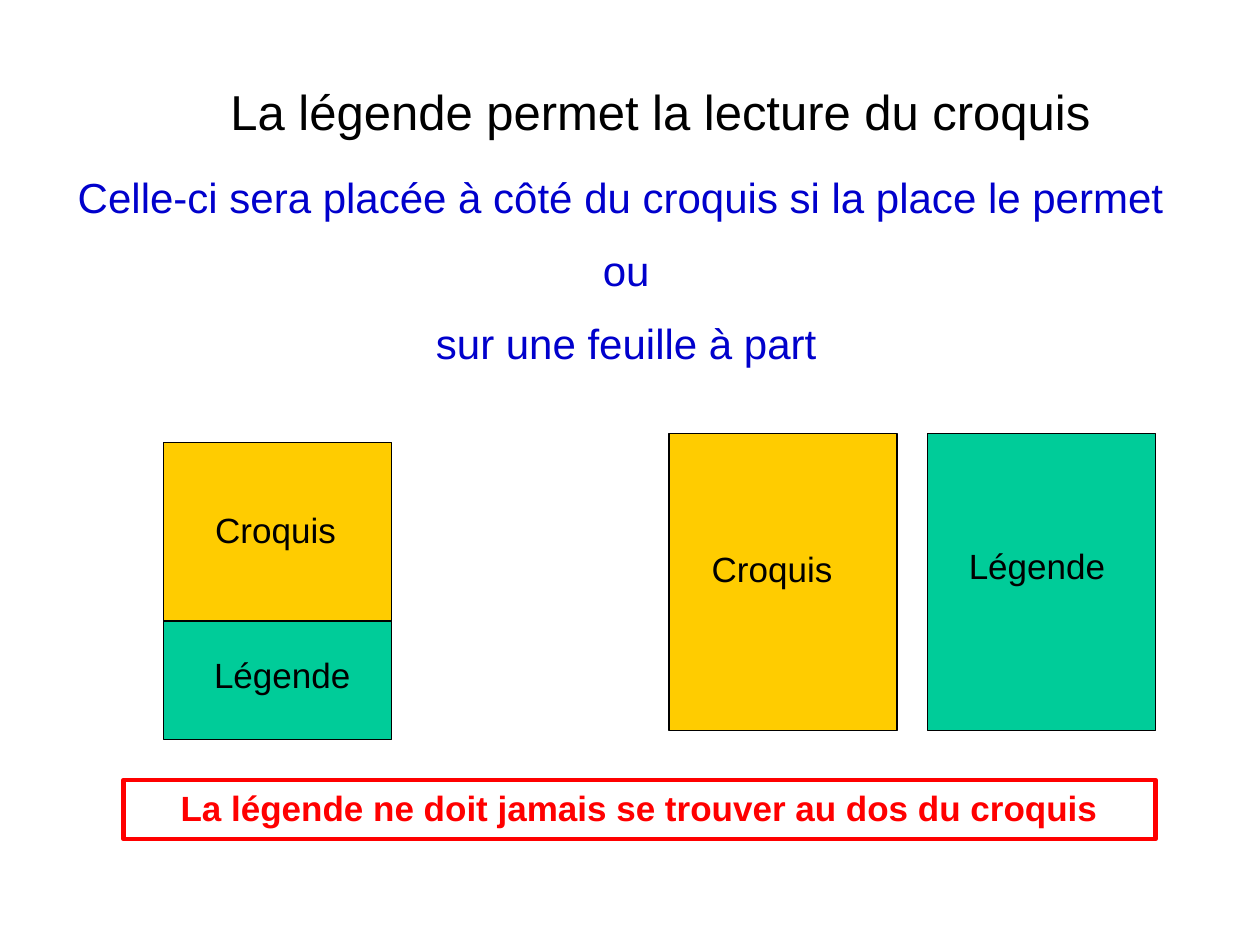
from pptx import Presentation
from pptx.dml.color import RGBColor
from pptx.enum.shapes import MSO_SHAPE as Shape
from pptx.enum.text import MSO_ANCHOR as Anchor, PP_ALIGN as Align
from pptx.util import Inches, Pt

BLACK = RGBColor(0x00, 0x00, 0x00)
BLUE = RGBColor(0x00, 0x00, 0xCC)
RED = RGBColor(0xFF, 0x00, 0x00)
YELLOW = RGBColor(0xFF, 0xCC, 0x00)
GREEN = RGBColor(0x00, 0xCC, 0x99)

PANEL_WIDTH, PANEL_HEIGHT = 1.81, 2.36
SKETCH_LABEL = (1.26, 0.43)
LEGEND_LABEL = (1.42, 0.43)


def write_text(shape, lines, size=20, color=BLACK, bold=False,
               align=Align.CENTER, space=0, right_margins=()):
    """Fill the shape with one paragraph per line; right_margins are in inches."""
    frame = shape.text_frame
    frame.word_wrap = True
    frame.vertical_anchor = Anchor.TOP
    for index, line in enumerate(lines):
        paragraph = frame.paragraphs[0] if index == 0 else frame.add_paragraph()
        paragraph.alignment = align
        paragraph.space_before = Pt(space if index else 0)
        if index < len(right_margins):
            properties = paragraph._p.get_or_add_pPr()
            properties.set("marR", str(Inches(right_margins[index])))
        run = paragraph.add_run()
        run.text = line
        run.font.name = "Arial"
        run.font.size = Pt(size)
        run.font.bold = bold
        run.font.color.rgb = color


def add_text(shapes, box, lines, **text_format):
    write_text(shapes.add_textbox(*map(Inches, box)), lines, **text_format)


def add_rectangle(shapes, box, fill=None, line=BLACK, width=0.75):
    rectangle = shapes.add_shape(Shape.RECTANGLE, *map(Inches, box))
    rectangle.shadow.inherit = False
    if fill is None:
        rectangle.fill.background()
    else:
        rectangle.fill.solid()
        rectangle.fill.fore_color.rgb = fill
    rectangle.line.color.rgb = line
    rectangle.line.width = Pt(width)
    return rectangle


def add_heading(shapes):
    add_text(shapes, (1.3, 0.6, 7.88, 0.57),
             ["La légende permet la lecture du croquis"], size=28)
    add_text(shapes, (0.43, 1.31, 9.17, 1.7),
             ["Celle-ci sera placée à côté du croquis si la place le permet",
              "ou",
              "sur une feuille à part"],
             size=24, color=BLUE, space=13, right_margins=(0.18, 0.09))


def add_separate_sheets(slide, left, top):
    """Sketch and legend on two sheets side by side."""
    shapes = slide.shapes.add_group_shape().shapes
    legend_left = left + PANEL_WIDTH + 0.24
    add_rectangle(shapes, (left, top, PANEL_WIDTH, PANEL_HEIGHT), YELLOW)
    add_rectangle(shapes, (legend_left, top, PANEL_WIDTH, PANEL_HEIGHT), GREEN)
    add_text(shapes, (left + 0.24, top + 0.86, *SKETCH_LABEL), ["Croquis"],
             align=Align.LEFT)
    add_text(shapes, (legend_left + 0.16, top + 0.83, *LEGEND_LABEL), ["Légende"])


def add_shared_sheet(slide, left, top):
    """Sketch above its legend on a single sheet."""
    shapes = slide.shapes.add_group_shape().shapes
    add_rectangle(shapes, (left, top, PANEL_WIDTH, PANEL_HEIGHT), GREEN)
    add_text(shapes, (left + 0.23, top + 1.63, *LEGEND_LABEL), ["Légende"])
    add_rectangle(shapes, (left, top, PANEL_WIDTH, 1.42), YELLOW)
    add_text(shapes, (left + 0.31, top + 0.48, *SKETCH_LABEL), ["Croquis"],
             align=Align.LEFT)


def add_warning(shapes, box):
    warning = add_rectangle(shapes, box, line=RED, width=2.5)
    write_text(warning, ["La légende ne doit jamais se trouver au dos du croquis"],
               color=RED, bold=True)


def main():
    presentation = Presentation()
    presentation.slide_width = Inches(10)
    presentation.slide_height = Inches(7.5)
    slide = presentation.slides.add_slide(presentation.slide_layouts[6])
    add_heading(slide.shapes)
    add_separate_sheets(slide, 5.31, 3.44)
    add_warning(slide.shapes, (0.98, 6.19, 8.19, 0.47))
    add_shared_sheet(slide, 1.3, 3.51)
    presentation.save("out.pptx")


if __name__ == "__main__":
    main()
